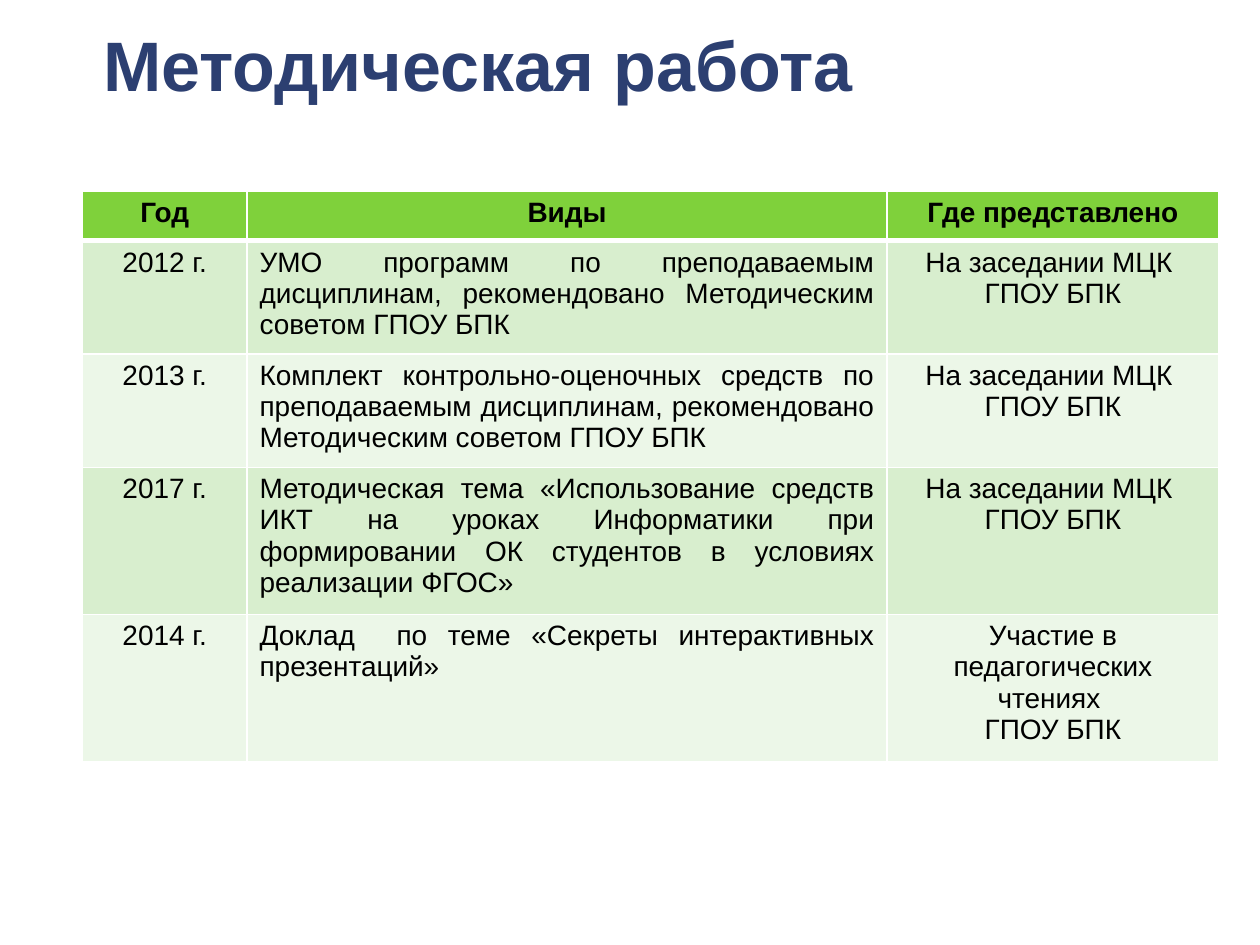
from lxml import etree
from pptx import Presentation
from pptx.dml.color import RGBColor
from pptx.enum.text import MSO_ANCHOR, PP_ALIGN
from pptx.oxml.ns import qn
from pptx.util import Cm, Pt

HEADERS = ["Год", "Виды", "Где представлено"]
MEETING = ["На заседании МЦК ", "ГПОУ БПК"]
WORKS = [
    ("2012 г.", "УМО программ по преподаваемым дисциплинам, рекомендовано "
                "Методическим советом ГПОУ БПК", MEETING),
    ("2013 г.", "Комплект контрольно-оценочных средств по преподаваемым "
                "дисциплинам, рекомендовано Методическим советом ГПОУ БПК", MEETING),
    ("2017 г.", "Методическая тема «Использование средств ИКТ на уроках "
                "Информатики при формировании ОК студентов в условиях "
                "реализации ФГОС»", MEETING),
    ("2014 г.", "Доклад  по теме «Секреты интерактивных презентаций» ",
     ["Участие в педагогических чтениях ", "ГПОУ БПК"]),
]
COLUMN_WIDTHS = [3.32, 12.9, 6.69]
ROW_HEIGHTS = [0.99, 2.13, 2.13, 2.75, 2.75]


def color(hex_string):
    return RGBColor.from_string(hex_string)


class SlideBuilder:
    FONT = "Arial"
    TITLE = "2C3F71"
    TEXT = "000000"
    HEADER = "7FD13B"
    BANDS = ("D8EECE", "ECF7E8")
    BORDER = "FFFFFF"

    def __init__(self, slide):
        self.slide = slide

    def add_run(self, paragraph, text, size, ink, bold=False):
        run = paragraph.add_run()
        run.text = text
        run.font.name = self.FONT
        run.font.size = Pt(size)
        run.font.bold = bold
        run.font.color.rgb = color(ink)

    def add_title(self, text, left, top, width, height):
        title = self.slide.shapes.add_textbox(Cm(left), Cm(top), Cm(width), Cm(height))
        frame = title.text_frame
        frame.word_wrap = True
        frame.vertical_anchor = MSO_ANCHOR.MIDDLE
        paragraph = frame.paragraphs[0]
        paragraph.line_spacing = 0.9
        self.add_run(paragraph, text, 40, self.TITLE, bold=True)

    def add_borders(self, cell, bottom):
        properties = cell._tc.get_or_add_tcPr()
        widths = {"a:lnL": 1, "a:lnR": 1, "a:lnT": 1, "a:lnB": bottom}
        for position, (side, width) in enumerate(widths.items()):
            line = etree.Element(qn(side), w=str(Pt(width)))
            fill = etree.SubElement(line, qn("a:solidFill"))
            etree.SubElement(fill, qn("a:srgbClr"), val=self.BORDER)
            properties.insert(position, line)

    def fill_cell(self, cell, lines, fill, align, bold=False, bottom=1):
        cell.fill.solid()
        cell.fill.fore_color.rgb = color(fill)
        self.add_borders(cell, bottom)
        frame = cell.text_frame
        for index, text in enumerate(lines):
            paragraph = frame.add_paragraph() if index else frame.paragraphs[0]
            paragraph.alignment = align
            self.add_run(paragraph, text, 16, self.TEXT, bold)

    def add_table(self, headers, records, left, top, widths, heights):
        table = self.slide.shapes.add_table(
            len(heights), len(widths), Cm(left), Cm(top),
            Cm(sum(widths)), Cm(sum(heights))).table
        for column, width in zip(table.columns, widths):
            column.width = Cm(width)
        for row, height in zip(table.rows, heights):
            row.height = Cm(height)

        # Header row
        for column, header in enumerate(headers):
            self.fill_cell(table.cell(0, column), [header], self.HEADER,
                           PP_ALIGN.CENTER, bold=True, bottom=3)

        # Banded body rows
        for row, (year, work, venue) in enumerate(records, start=1):
            band = self.BANDS[(row - 1) % 2]
            self.fill_cell(table.cell(row, 0), [year], band, PP_ALIGN.CENTER)
            self.fill_cell(table.cell(row, 1), [work], band, PP_ALIGN.JUSTIFY)
            self.fill_cell(table.cell(row, 2), venue, band, PP_ALIGN.CENTER)


def main():
    presentation = Presentation()
    presentation.slide_width = Cm(25.4)
    presentation.slide_height = Cm(19.05)
    builder = SlideBuilder(presentation.slides.add_slide(presentation.slide_layouts[6]))

    # Title
    builder.add_title("Методическая работа", 1.83, 0.03, 21.77, 2.72)

    # Methodical work by year
    builder.add_table(HEADERS, WORKS, 1.66, 3.86, COLUMN_WIDTHS, ROW_HEIGHTS)

    presentation.save("out.pptx")


if __name__ == "__main__":
    main()
